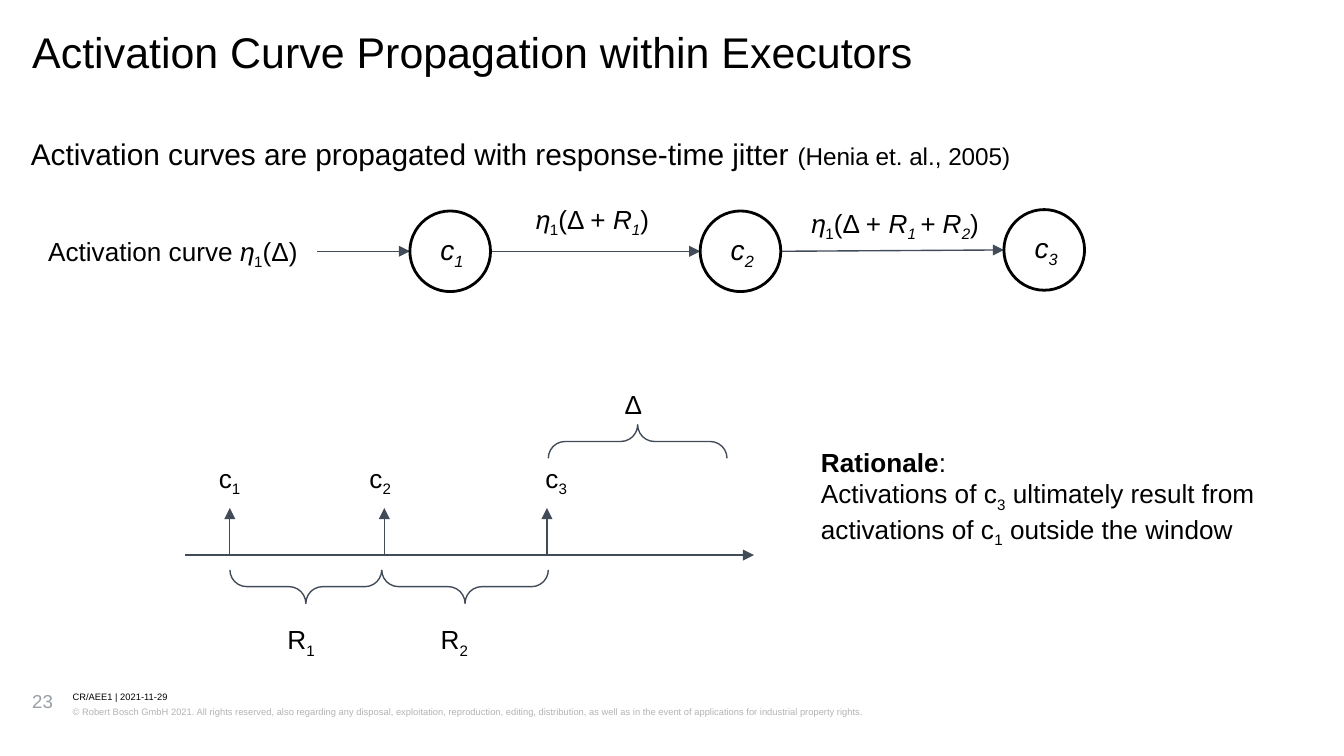
from lxml import etree
from pptx import Presentation
from pptx.dml.color import RGBColor
from pptx.enum.shapes import MSO_CONNECTOR, MSO_SHAPE
from pptx.enum.text import MSO_ANCHOR, PP_ALIGN
from pptx.oxml.ns import qn
from pptx.util import Emu, Pt

PX = 9144  # 100 px to the inch
FONT = "Arial"
BLACK, SLATE = "000000", "424C58"
LABEL_INSET = 10
BRACE_DEPTH = 25
NODE_SIZE = 60
AXIS_Y = 413


def px(value):
    return Emu(round(value * PX))


def color(hex_text):
    return RGBColor.from_string(hex_text)


def fill_paragraph(paragraph, runs, size, hex_text=BLACK, spacing=None):
    """Write runs given as (text, style); style letters: s subscript, i italic, b bold."""
    paragraph.font.name = FONT
    paragraph.font.size = Pt(size)
    paragraph.font.color.rgb = color(hex_text)
    if spacing:
        paragraph.line_spacing = spacing
    for text, style in runs:
        run = paragraph.add_run()
        run.text = text
        if "s" in style:
            run.font._element.set("baseline", "-25000")
        if "i" in style:
            run.font.italic = True
        if "b" in style:
            run.font.bold = True


def set_insets(frame, horizontal, vertical):
    frame.margin_left = frame.margin_right = px(horizontal)
    frame.margin_top = frame.margin_bottom = px(vertical)


def add_text(slide, box, lines, size, hex_text=BLACK, spacing=None, inset=0):
    frame = slide.shapes.add_textbox(*map(px, box)).text_frame
    frame.word_wrap = True
    set_insets(frame, inset, inset)
    for index, runs in enumerate(lines):
        paragraph = frame.add_paragraph() if index else frame.paragraphs[0]
        fill_paragraph(paragraph, runs, size, hex_text, spacing)


def add_label(slide, left, top, width, *lines, height=44):
    add_text(slide, (left, top, width, height), lines, 14, inset=LABEL_INSET)


def add_arrow(slide, *ends):
    arrow = slide.shapes.add_connector(MSO_CONNECTOR.STRAIGHT, *map(px, ends))
    arrow.line.color.rgb = color(SLATE)
    arrow.line.width = Pt(0.75)
    etree.SubElement(arrow.line._get_or_add_ln(), qn("a:tailEnd"), type="triangle")
    etree.SubElement(arrow._element.spPr, qn("a:effectLst"))


def add_outline(slide, preset, box, hex_text, width):
    shape = slide.shapes.add_shape(preset, *map(px, box))
    shape.shadow.inherit = False
    shape.fill.background()
    shape.line.color.rgb = color(hex_text)
    shape.line.width = Pt(width)
    return shape


def add_brace(slide, left, right, top, rotation):
    """Draw a horizontal brace: rotation 90 points down, 270 points up."""
    length = right - left
    box = ((left + right - BRACE_DEPTH) / 2, top + (BRACE_DEPTH - length) / 2,
           BRACE_DEPTH, length)
    brace = add_outline(slide, MSO_SHAPE.RIGHT_BRACE, box, SLATE, 0.75)
    brace.adjustments[0] = brace.adjustments[1] = 0.5
    brace.rotation = rotation


def add_node(slide, left, top, number):
    node = add_outline(slide, MSO_SHAPE.OVAL, (left, top, NODE_SIZE, NODE_SIZE), BLACK, 1.5)
    frame = node.text_frame
    set_insets(frame, 8, 4)
    frame.vertical_anchor = MSO_ANCHOR.MIDDLE
    paragraph = frame.paragraphs[0]
    paragraph.alignment = PP_ALIGN.RIGHT
    fill_paragraph(paragraph, [("c", "i"), (f"{number} ", "si")], 15)


def add_chain(slide):
    for ends in ((236, 187, 305, 187), (365, 187, 521, 187), (581, 187, 747, 186)):
        add_arrow(slide, *ends)
    for number, (left, top) in enumerate(((305, 157), (521, 157), (747, 156)), 1):
        add_node(slide, left, top, number)

    eta = [("𝜂", ""), ("1", "s")]
    jitter = eta + [("(Δ + ", ""), ("R", "i")]
    add_label(slide, 26, 165, 210, [("Activation curve ", "")] + eta + [("(Δ)", "")])
    add_label(slide, 389, 141, 109, jitter + [("1", "si"), (")", "")])
    add_label(slide, 594, 144, 151,
              jitter + [("1 ", "si"), ("+ R", "i"), ("2", "si"), (")", "")])


def add_timeline(slide):
    add_arrow(slide, 138, AXIS_Y, 561, AXIS_Y)
    for number, (x, label_left) in enumerate(((171, 153), (286, 265), (407, 396)), 1):
        add_arrow(slide, x, AXIS_Y + 1, x, 378)
        add_label(slide, label_left, 334, 51, [("c", ""), (str(number), "s")])
    for number, (left, right, label_left) in enumerate(((171, 284, 204), (284, 408, 318)), 1):
        add_brace(slide, left, right, 424, 90)
        add_label(slide, label_left, 454, 56, [("R", ""), (str(number), "s")])
    add_brace(slide, 408, 541, 316, 270)
    add_label(slide, 455, 279, 443, [("Δ", "")])


def add_footer(slide):
    add_text(slide, (24, 513, 26, 37), [[("23", "")]], 10, "999FA6")
    add_text(slide, (54, 514, 834, 10), [[("CR/AEE1 | 2021-11-29", "")]], 5, spacing=1.07)
    rights = ("© Robert Bosch GmbH 2021. All rights reserved, also regarding any disposal, "
              "exploitation, reproduction, editing, distribution, as well as in the event of "
              "applications for industrial property rights.")
    add_text(slide, (54, 524, 834, 20), [[(rights, "")]], 5, "B2B3B5", 1.2)


def add_statement(slide):
    add_text(slide, (23, 97, 828, 31),
             [[("Activation curves are propagated with response-time jitter ", "")]],
             16, spacing=1.15)
    paragraph = slide.shapes[-1].text_frame.paragraphs[0]
    citation = paragraph.add_run()
    citation.text = "(Henia et. al., 2005)"
    citation.font.size = Pt(13)


def main():
    presentation = Presentation()
    presentation.slide_width, presentation.slide_height = px(1000), px(562.5)
    slide = presentation.slides.add_slide(presentation.slide_layouts[6])

    add_text(slide, (24, 24, 953, 35),
             [[("Activation Curve Propagation within Executors", "")]], 23, spacing=0.89)
    add_statement(slide)
    add_chain(slide)
    add_timeline(slide)
    add_label(slide, 601, 322, 368,
              [("Rationale", "b"), (":", "")],
              [("Activations of c", ""), ("3", "s"),
               (" ultimately result from activations of c", ""), ("1", "s"),
               (" outside the window", "")], height=91)
    add_footer(slide)
    presentation.save("out.pptx")


if __name__ == "__main__":
    main()
